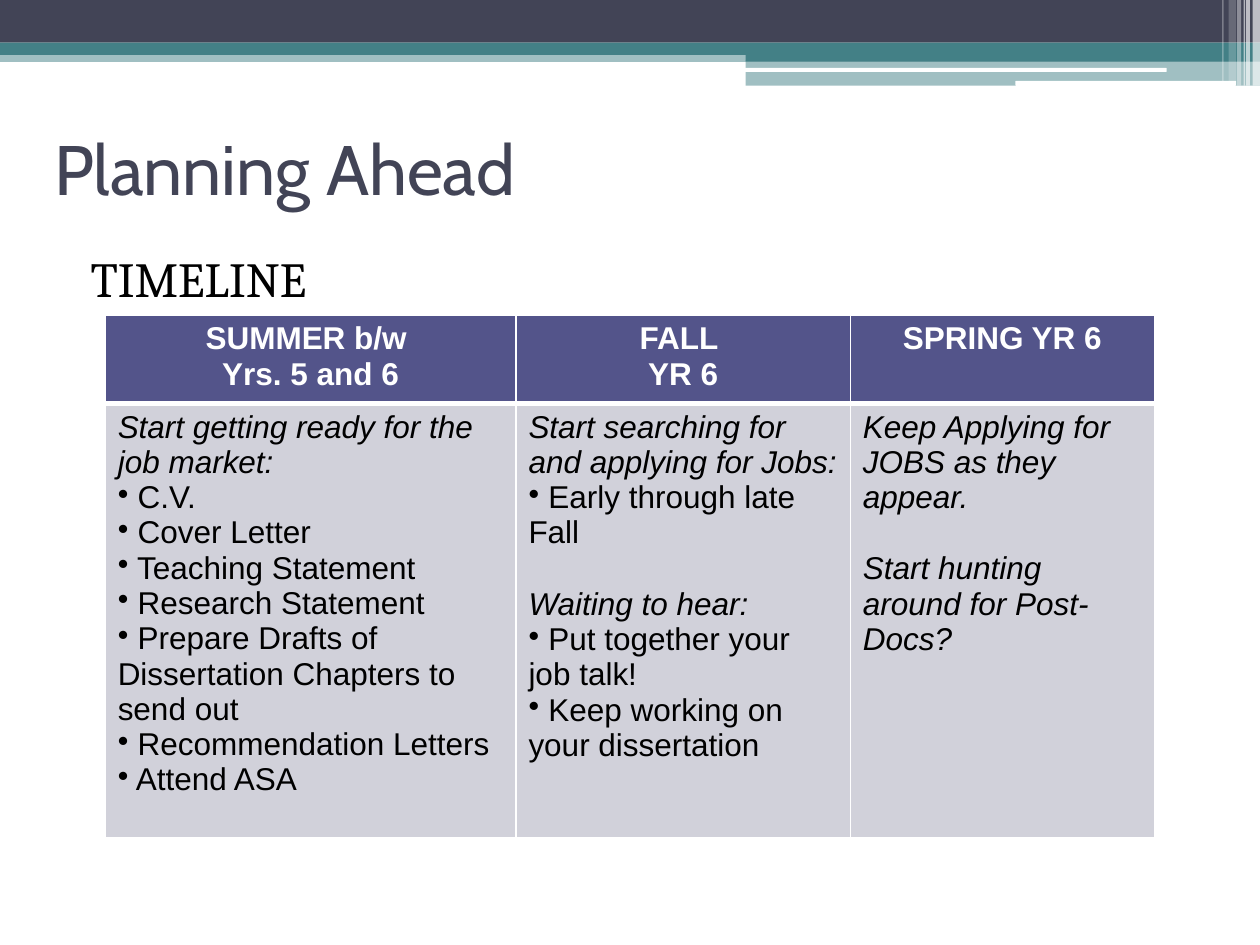
from dataclasses import dataclass

from lxml import etree
from pptx import Presentation
from pptx.dml.color import RGBColor
from pptx.enum.shapes import MSO_SHAPE
from pptx.enum.text import MSO_ANCHOR, PP_ALIGN
from pptx.oxml.ns import qn
from pptx.util import Cm, Pt

RECTANGLE, ROUNDED = MSO_SHAPE.RECTANGLE, MSO_SHAPE.ROUNDED_RECTANGLE
TOP, MIDDLE = MSO_ANCHOR.TOP, MSO_ANCHOR.MIDDLE
LEFT, CENTER = PP_ALIGN.LEFT, PP_ALIGN.CENTER


@dataclass(frozen=True)
class Theme:
    dark: str = "424456"
    teal: str = "438086"
    white: str = "FFFFFF"
    black: str = "000000"
    header_fill: str = "53548A"
    body_fill: str = "D1D1DA"
    title_font: str = "Cabin"
    lead_font: str = "Cambria"
    table_font: str = "Arial"
    title_size: int = 40
    lead_size: int = 28
    table_size: int = 18
    section_gap: float = 20.6
    thin_border: int = 1
    thick_border: int = 3


THEME = Theme()


@dataclass(frozen=True)
class Band:
    """A decorative bar; lengths in centimetres, opacity in percent."""
    left: float
    top: float
    width: float
    height: float
    color: str
    opacity: int = 100
    geometry: MSO_SHAPE = RECTANGLE


@dataclass(frozen=True)
class Line:
    text: str
    bullet: bool = False
    gap_before: bool = False


@dataclass(frozen=True)
class Period:
    """One table column: its heading lines and its tasks."""
    width: float
    heading: tuple[str, ...]
    tasks: tuple[Line, ...]


def bullets(*items: str) -> tuple[Line, ...]:
    return tuple(Line(f" {item}", bullet=True) for item in items)


BANDS = [
    Band(0, 1.02, 25.4, 0.23, THEME.teal, 50),
    Band(0, 0, 25.4, 0.86, THEME.dark),
    Band(0, 0.86, 25.4, 0.25, THEME.teal),
    Band(15.03, 0.99, 10.37, 0.25, THEME.teal),
    Band(15.03, 1.22, 10.37, 0.51, THEME.teal, 50),
    Band(15.01, 1.37, 8.51, 0.08, THEME.white, geometry=ROUNDED),
    Band(20.47, 1.63, 4.45, 0.1, THEME.white, geometry=ROUNDED),
] + [
    Band(left, 0, width, height, THEME.white, opacity)
    for left, width, height, opacity in [
        (25.25, 0.15, 1.73, 65), (25.12, 0.08, 1.73, 65), (25.07, 0.03, 1.73, 60),
        (24.94, 0.08, 1.73, 40), (24.77, 0.15, 1.63, 20), (24.64, 0.03, 1.63, 30),
    ]
]

PERIODS = [
    Period(8.28, ("SUMMER b/w ", "Yrs. 5 and 6"), (
        Line("Start getting ready for the job market:"),
        *bullets("C.V.", "Cover Letter", "Teaching Statement", "Research Statement",
                 "Prepare Drafts of Dissertation Chapters to send out",
                 "Recommendation Letters", "Attend ASA"))),
    Period(6.74, ("FALL ", "YR 6"), (
        Line("Start searching for and applying for Jobs:"),
        *bullets("Early through late Fall"),
        Line("Waiting to hear:", gap_before=True),
        *bullets("Put together your job talk!", "Keep working on your dissertation"))),
    Period(6.13, ("SPRING YR 6",), (
        Line("Keep Applying for JOBS as they appear."),
        Line("Start hunting around for Post-Docs?", gap_before=True))),
]
ROW_HEIGHTS = (1.68, 8.76)


def set_attributes(target, values: dict) -> None:
    for name, value in values.items():
        setattr(target, name, value)


def write_run(paragraph, text: str, font: str, size: int, color: str, **styles) -> None:
    run = paragraph.add_run()
    run.text = text
    set_attributes(run.font, {"name": font, "size": Pt(size), **styles})
    run.font.color.rgb = RGBColor.from_string(color)


def draw_band(slide, band: Band) -> None:
    shape = slide.shapes.add_shape(band.geometry, Cm(band.left), Cm(band.top),
                                   Cm(band.width), Cm(band.height))
    shape.shadow.inherit = False
    shape.line.fill.background()
    shape.fill.solid()
    shape.fill.fore_color.rgb = RGBColor.from_string(band.color)
    if band.opacity < 100:
        color = shape.fill._xPr.find(f".//{qn('a:srgbClr')}")
        etree.SubElement(color, qn("a:alpha"), val=str(band.opacity * 1000))


def draw_text(slide, box: tuple[float, ...], anchor: MSO_ANCHOR, text: str,
              font: str, size: int, color: str):
    """Add a one-paragraph text box and return its paragraph."""
    frame = slide.shapes.add_textbox(*map(Cm, box)).text_frame
    set_attributes(frame, {"word_wrap": True, "vertical_anchor": anchor})
    paragraph = frame.paragraphs[0]
    write_run(paragraph, text, font, size, color)
    return paragraph


def style_cell(cell, fill: str, top: int, bottom: int) -> None:
    """Give a cell white borders, with top and bottom widths in points, and a fill."""
    properties = cell._tc.get_or_add_tcPr()
    widths = {"lnL": THEME.thin_border, "lnR": THEME.thin_border,
              "lnT": top, "lnB": bottom}
    for side, width in widths.items():
        border = etree.SubElement(properties, qn(f"a:{side}"), w=str(Pt(width)))
        solid = etree.SubElement(border, qn("a:solidFill"))
        etree.SubElement(solid, qn("a:srgbClr"), val=THEME.white)
    cell.fill.solid()
    cell.fill.fore_color.rgb = RGBColor.from_string(fill)


def write_cell(cell, lines: tuple[Line, ...], is_header: bool) -> None:
    frame = cell.text_frame
    for index, line in enumerate(lines):
        paragraph = frame.add_paragraph() if index else frame.paragraphs[0]
        paragraph.alignment = CENTER if is_header else LEFT
        if line.gap_before:
            paragraph.space_before = Pt(THEME.section_gap)
        if line.bullet:
            properties = paragraph._p.get_or_add_pPr()
            set_bullet = {"marL": "0", "indent": "0"}
            for name, value in set_bullet.items():
                properties.set(name, value)
            etree.SubElement(properties, qn("a:buChar"), char="•")
        write_run(paragraph, line.text, THEME.table_font, THEME.table_size,
                  THEME.white if is_header else THEME.black,
                  bold=is_header, italic=not is_header and not line.bullet)


def draw_timeline(slide, left: float, top: float) -> None:
    width = sum(period.width for period in PERIODS)
    table = slide.shapes.add_table(len(ROW_HEIGHTS), len(PERIODS), Cm(left), Cm(top),
                                   Cm(width), Cm(sum(ROW_HEIGHTS))).table
    for row, height in zip(table.rows, ROW_HEIGHTS):
        row.height = Cm(height)
    for index, period in enumerate(PERIODS):
        table.columns[index].width = Cm(period.width)
        header, body = table.cell(0, index), table.cell(1, index)
        style_cell(header, THEME.header_fill, THEME.thin_border, THEME.thick_border)
        style_cell(body, THEME.body_fill, THEME.thick_border, THEME.thin_border)
        write_cell(header, tuple(map(Line, period.heading)), is_header=True)
        write_cell(body, period.tasks, is_header=False)


def main() -> None:
    presentation = Presentation()
    set_attributes(presentation, {"slide_width": Cm(25.4), "slide_height": Cm(19.05)})
    slide = presentation.slides.add_slide(presentation.slide_layouts[6])
    for band in BANDS:
        draw_band(slide, band)
    draw_text(slide, (0.84, 1.9, 22.86, 2.97), MIDDLE, "Planning Ahead",
              THEME.title_font, THEME.title_size, THEME.dark)
    lead = draw_text(slide, (1.27, 4.88, 22.86, 12.01), TOP, "TIMELINE",
                     THEME.lead_font, THEME.lead_size, THEME.black)
    lead.space_before = Pt(3)
    for name, length in {"marL": Cm(1.02), "indent": Cm(-0.71)}.items():
        lead._p.get_or_add_pPr().set(name, str(length))
    draw_timeline(slide, 2.12, 6.35)
    presentation.save("out.pptx")


if __name__ == "__main__":
    main()
